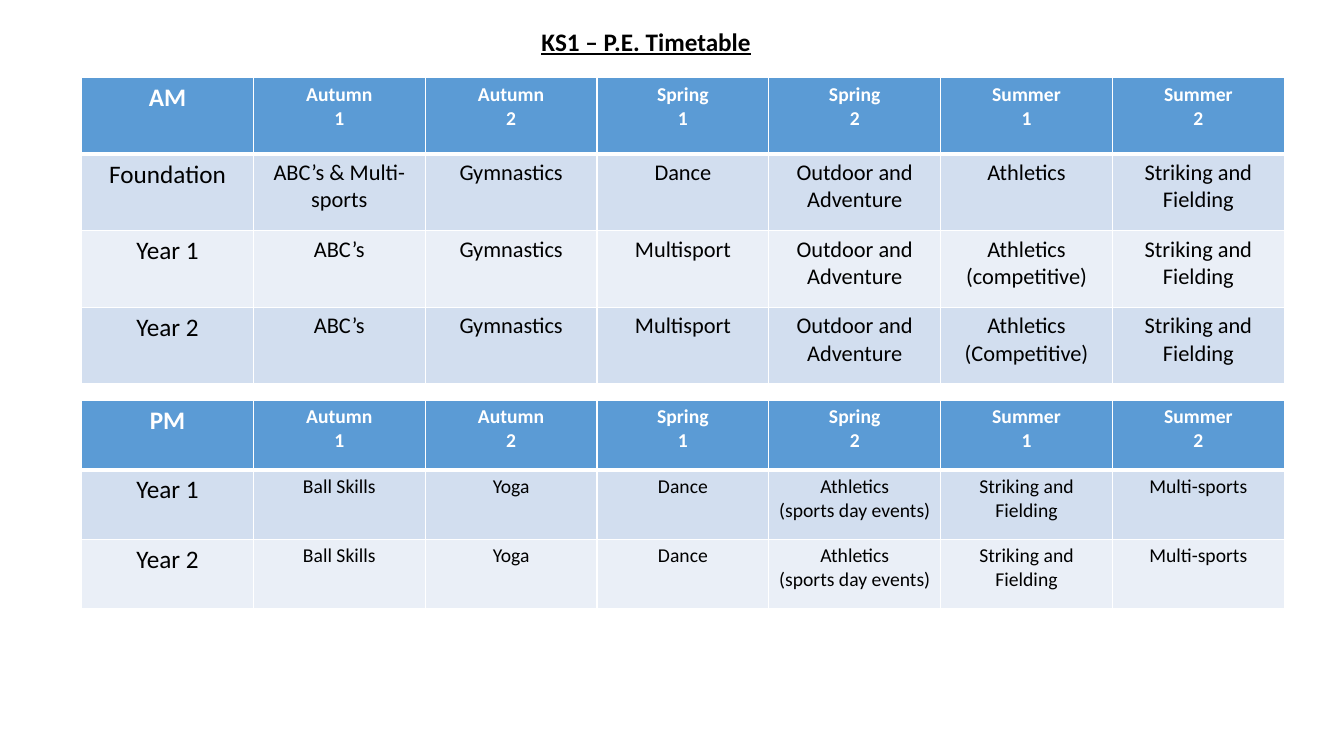
import pptx
import pptx.dml.color
import pptx.enum.text
import pptx.oxml
import pptx.oxml.ns
import pptx.util

COLOURS = {
    "header": "5B9BD5",
    "odd": "D2DEEF",
    "even": "EAEFF7",
    "light": "FFFFFF",
    "dark": "000000",
}
FONT = "Calibri"
LEFT = 0.81
COLUMN = 11.93 / 7

TERMS = [f"{season}\n{half}" for season in ("Autumn", "Spring", "Summer") for half in (1, 2)]
OUTDOOR = "Outdoor and Adventure"
STRIKING = "Striking and Fielding"
AFTERNOON = ["Ball Skills", "Yoga", "Dance", "Athletics\n(sports day events)", STRIKING, "Multi-sports"]

# Each timetable: top, row height, size of activities, rows of text
TIMETABLES = [
    (0.77, 0.76, 16, [
        ["AM", *TERMS],
        ["Foundation", "ABC’s & Multi-sports", "Gymnastics", "Dance", OUTDOOR, "Athletics", STRIKING],
        ["Year 1", "ABC’s", "Gymnastics", "Multisport", OUTDOOR, "Athletics\n(competitive)", STRIKING],
        ["Year 2", "ABC’s", "Gymnastics", "Multisport", OUTDOOR, "Athletics\n(Competitive)", STRIKING],
    ]),
    (3.97, 0.69, 14, [
        ["PM", *TERMS],
        ["Year 1", *AFTERNOON],
        ["Year 2", *AFTERNOON],
    ]),
]


def add_text(para, text, size, colour, bold):
    span = para.add_run()
    span.text = text
    span.font.name = FONT
    span.font.size = pptx.util.Pt(size)
    span.font.bold = bold
    span.font.color.rgb = pptx.dml.color.RGBColor.from_string(COLOURS[colour])
    return span


def add_borders(cell, row_number):
    widths = {"L": 1, "R": 1, "T": 3 if row_number == 1 else 1, "B": 3 if row_number == 0 else 1}
    properties = cell._tc.get_or_add_tcPr()
    for side, width in widths.items():
        properties.append(pptx.oxml.parse_xml(
            f'<a:ln{side} {pptx.oxml.ns.nsdecls("a")} w="{pptx.util.Pt(width)}">'
            f'<a:solidFill><a:srgbClr val="{COLOURS["light"]}"/></a:solidFill></a:ln{side}>'
        ))


deck = pptx.Presentation()
deck.slide_width = pptx.util.Inches(13.33)
deck.slide_height = pptx.util.Inches(7.5)
page = deck.slides.add_slide(deck.slide_layouts[5])

# Timetables
for top, row_height, activity_size, rows in TIMETABLES:
    frame = page.shapes.add_table(
        len(rows), len(rows[0]), pptx.util.Inches(LEFT), pptx.util.Inches(top),
        pptx.util.Inches(COLUMN * len(rows[0])), pptx.util.Inches(row_height * len(rows)),
    )
    for row_number, texts in enumerate(rows):
        is_header = row_number == 0
        shade = "header" if is_header else "odd" if row_number % 2 else "even"
        for column_number, text in enumerate(texts):
            cell = frame.table.cell(row_number, column_number)
            add_borders(cell, row_number)
            cell.fill.solid()
            cell.fill.fore_color.rgb = pptx.dml.color.RGBColor.from_string(COLOURS[shade])
            size = 18 if column_number == 0 else 14 if is_header else activity_size
            for line_number, line in enumerate(text.split("\n")):
                para = cell.text_frame.add_paragraph() if line_number else cell.text_frame.paragraphs[0]
                para.alignment = pptx.enum.text.PP_ALIGN.CENTER
                add_text(para, line, size, "light" if is_header else "dark", is_header)

# Title
title = page.shapes.title
title.left, title.top = pptx.util.Inches(5.27), pptx.util.Inches(0.21)
title.width, title.height = pptx.util.Inches(4.51), pptx.util.Inches(0.4)
title.text_frame.word_wrap = True
title.text_frame.auto_size = pptx.enum.text.MSO_AUTO_SIZE.SHAPE_TO_FIT_TEXT
title.text_frame.vertical_anchor = pptx.enum.text.MSO_ANCHOR.TOP
heading = title.text_frame.paragraphs[0]
heading.alignment = pptx.enum.text.PP_ALIGN.LEFT
add_text(heading, "KS1 – P.E. Timetable", 18, "dark", True).font.underline = True

deck.save("out.pptx")
